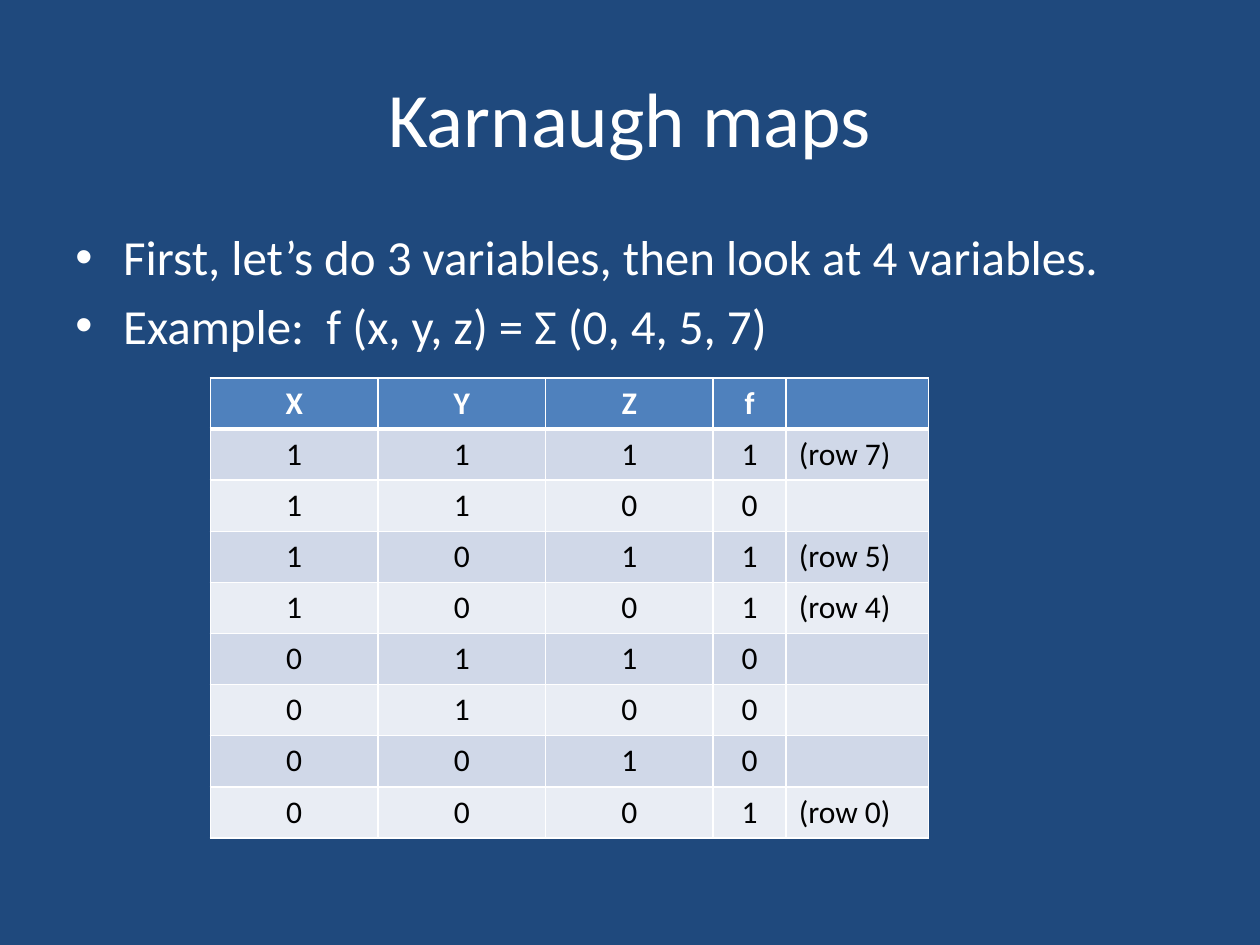
from itertools import product

from lxml.etree import SubElement
from pptx import Presentation
from pptx.dml.color import RGBColor
from pptx.enum.text import MSO_ANCHOR, PP_ALIGN
from pptx.oxml.ns import qn
from pptx.util import Inches, Pt

NAVY = RGBColor(0x1F, 0x49, 0x7D)
BLUE = RGBColor(0x4F, 0x81, 0xBD)
DARK = RGBColor(0xD0, 0xD8, 0xE8)
LIGHT = RGBColor(0xE9, 0xED, 0xF4)
WHITE = RGBColor(0xFF, 0xFF, 0xFF)
BLACK = RGBColor(0, 0, 0)


class Deck:
    face = "Calibri"

    def __init__(self, slide):
        self.slide = slide
        fill = slide.background.fill
        fill.solid()
        fill.fore_color.rgb = NAVY

    def style(self, para, size, color, bold=False):
        font = para.font
        font.name, font.size, font.bold = self.face, Pt(size), bold
        font.color.rgb = color

    def frame(self, left, top, width, height):
        box = self.slide.shapes.add_textbox(
            Inches(left), Inches(top), Inches(width), Inches(height))
        box.text_frame.word_wrap = True
        return box.text_frame

    def title(self, text, *place):
        frame = self.frame(*place)
        frame.vertical_anchor = MSO_ANCHOR.MIDDLE
        para = frame.paragraphs[0]
        para.text = text
        para.alignment = PP_ALIGN.CENTER
        self.style(para, 44, WHITE)

    def bullets(self, lines, *place):
        frame = self.frame(*place)
        frame.text = "\n".join(lines)
        for para in frame.paragraphs:
            para.space_before = Pt(5.6)
            self.style(para, 28, WHITE)
            props = para._p.get_or_add_pPr()
            props.set("marL", str(Inches(0.38)))
            props.set("indent", str(Inches(-0.38)))
            SubElement(props, qn("a:buFont"), typeface="Arial")
            SubElement(props, qn("a:buChar"), char="•")

    def border(self, cell, top, bottom):
        props = cell._tc.get_or_add_tcPr()
        for side, width in zip("LRTB", (1, 1, top, bottom)):
            line = SubElement(props, qn(f"a:ln{side}"), w=str(Pt(width)))
            fill = SubElement(line, qn("a:solidFill"))
            SubElement(fill, qn("a:srgbClr"), val=str(WHITE))

    def table(self, rows, widths, left, top, height):
        table = self.slide.shapes.add_table(
            len(rows), len(widths), Inches(left), Inches(top),
            Inches(sum(widths)), Inches(height)).table
        for col, width in zip(table.columns, widths):
            col.width = Inches(width)
        for i, row in enumerate(rows):
            head = i == 0
            shade = BLUE if head else DARK if i % 2 else LIGHT
            for j, text in enumerate(row):
                cell = table.cell(i, j)
                cell.text = text
                para = cell.text_frame.paragraphs[0]
                if j < len(row) - 1:
                    para.alignment = PP_ALIGN.CENTER
                self.style(para, 18, WHITE if head else BLACK, head)
                self.border(cell, 3 if i == 1 else 1, 3 if head else 1)
                cell.fill.solid()
                cell.fill.fore_color.rgb = shade


def truth(terms):
    rows = [["X", "Y", "Z", "f", ""]]
    for bits in product("10", repeat=3):
        num = int("".join(bits), 2)
        hit = num in terms
        rows.append([*bits, str(int(hit)), f"(row {num})" if hit else ""])
    return rows


def main():
    show = Presentation()
    show.slide_width, show.slide_height = Inches(10), Inches(7.5)
    deck = Deck(show.slides.add_slide(show.slide_layouts[6]))
    deck.title("Karnaugh maps", 0.5, 0.3, 9, 1.25)
    deck.bullets(
        ["First, let’s do 3 variables, then look at 4 variables.",
         "Example:  f (x, y, z) = Σ (0, 4, 5, 7)"],
        0.5, 1.75, 9, 4.95)
    deck.table(truth({0, 4, 5, 7}), [1.33, 1.33, 1.33, 0.58, 1.13],
               1.67, 3, 3.65)
    show.save("out.pptx")


if __name__ == "__main__":
    main()
